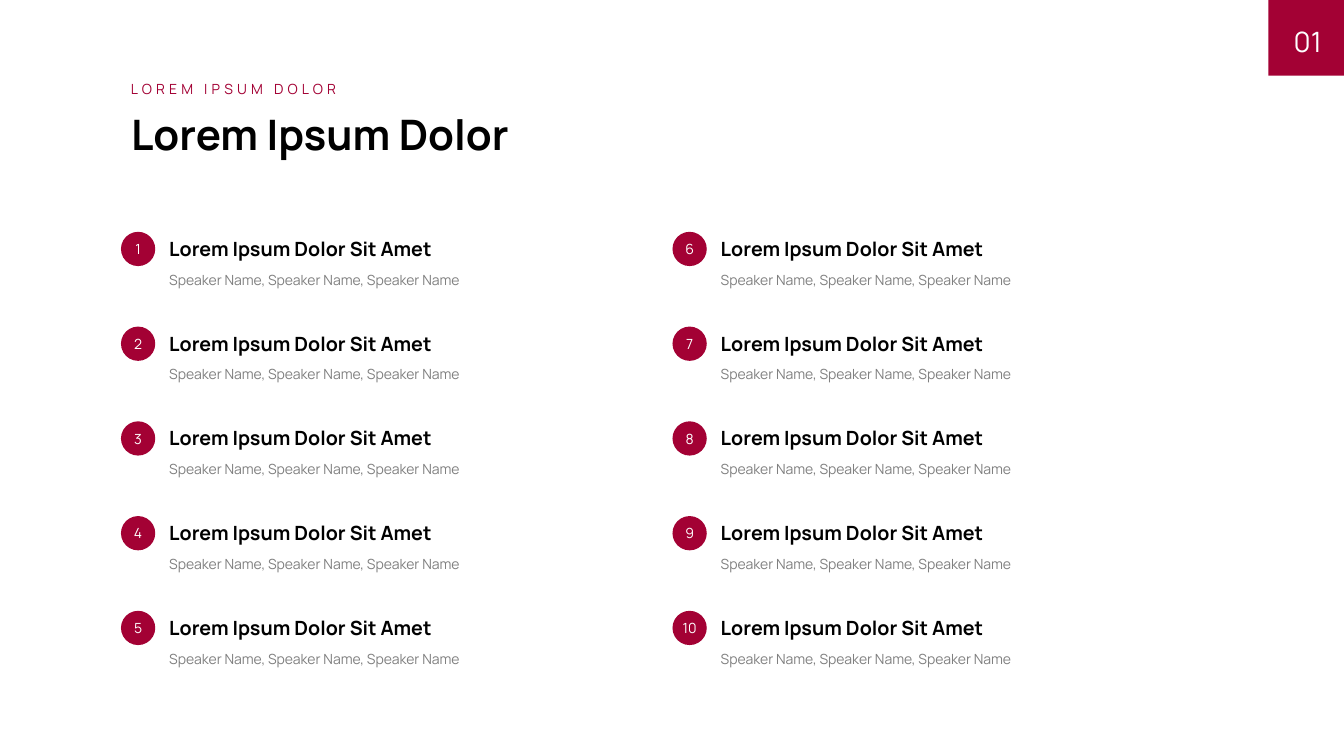
import pptx
import pptx.dml.color
import pptx.enum.shapes
import pptx.enum.text
import pptx.util

Inches = pptx.util.Inches
Shape = pptx.enum.shapes.MSO_SHAPE
Align = pptx.enum.text.PP_ALIGN
Anchor = pptx.enum.text.MSO_ANCHOR
AutoSize = pptx.enum.text.MSO_AUTO_SIZE

WIDTH, HEIGHT = 13.33, 7.5
FONT = "Manrope"
COLORS = {"accent": "A30134", "ink": "000000", "muted": "808080", "paper": "FFFFFF"}
ROWS = 5
COLUMN_PITCH, ROW_PITCH = 5.47, 0.94
BADGE = 0.34
SESSIONS = [("Lorem Ipsum Dolor Sit Amet", "Speaker Name, Speaker Name, Speaker Name")] * 10


def color(name):
    return pptx.dml.color.RGBColor.from_string(COLORS[name])


def write(shape, text, size, color_name, bold=False, align=Align.LEFT,
          anchor=Anchor.TOP, inset=None, auto_size=AutoSize.NONE):
    frame = shape.text_frame
    frame.text = text
    frame.word_wrap = True
    frame.auto_size = auto_size
    frame.vertical_anchor = anchor
    if inset is not None:
        frame.margin_left = frame.margin_right = inset
        frame.margin_top = frame.margin_bottom = inset
    paragraph = frame.paragraphs[0]
    paragraph.alignment = align
    font = paragraph.font
    font.name, font.size, font.bold = FONT, pptx.util.Pt(size), bold
    font.color.rgb = color(color_name)
    return paragraph


def add_text(shapes, box, text, size, color_name, **style):
    textbox = shapes.add_textbox(*map(Inches, box))
    return write(textbox, text, size, color_name, **style)


def add_accent_shape(shapes, preset, box):
    shape = shapes.add_shape(preset, *map(Inches, box))
    shape.shadow.inherit = False
    shape.fill.solid()
    shape.fill.fore_color.rgb = color("accent")
    shape.line.fill.background()
    return shape


def add_page_number(slide, left, top, side, number):
    add_accent_shape(slide.shapes, Shape.RECTANGLE, (left, top, side, side))
    add_text(slide.shapes, (left, top + 0.06, side - 0.22, side - 0.06), number, 20, "paper",
             align=Align.RIGHT, anchor=Anchor.MIDDLE, inset=0)


def add_heading(slide, left, top, width, kicker, title):
    paragraph = add_text(slide.shapes, (left, top, 4.17, 0.27), kicker, 10, "accent")
    letter_spacing = "300"
    paragraph.runs[0]._r.get_or_add_rPr().set("spc", letter_spacing)
    placeholder = slide.shapes.title
    placeholder.left, placeholder.top = Inches(left), Inches(top + 0.28)
    placeholder.width, placeholder.height = Inches(width), Inches(0.57)
    write(placeholder, title, 30, "ink", bold=True)


def add_session(slide, left, top, width, number, name, speakers):
    shapes = slide.shapes.add_group_shape().shapes
    text_left = left + BADGE + 0.04
    text_width = width - BADGE - 0.04
    add_text(shapes, (text_left, top + BADGE, text_width, 0.27), speakers, 10, "muted",
             auto_size=AutoSize.SHAPE_TO_FIT_TEXT)
    add_text(shapes, (text_left, top, text_width, BADGE), name, 14, "ink", bold=True,
             auto_size=AutoSize.SHAPE_TO_FIT_TEXT)
    badge = add_accent_shape(shapes, Shape.OVAL, (left, top, BADGE, BADGE))
    write(badge, str(number), 10, "paper", align=Align.CENTER, anchor=Anchor.MIDDLE, inset=0)


def add_agenda(slide, left, top):
    for index, (name, speakers) in enumerate(SESSIONS):
        column, row = divmod(index, ROWS)
        add_session(slide, left + column * COLUMN_PITCH, top + row * ROW_PITCH, 4.16,
                    index + 1, name, speakers)


def main():
    presentation = pptx.Presentation()
    presentation.slide_width, presentation.slide_height = Inches(WIDTH), Inches(HEIGHT)
    title_only = presentation.slide_layouts[5]
    slide = presentation.slides.add_slide(title_only)
    margin = 1.2
    add_page_number(slide, WIDTH - 0.75, 0, 0.75, "01")
    add_heading(slide, margin, 0.75, 9.64, "LOREM IPSUM DOLOR", "Lorem Ipsum Dolor")
    add_agenda(slide, margin, 2.3)
    presentation.save("out.pptx")


if __name__ == "__main__":
    main()
